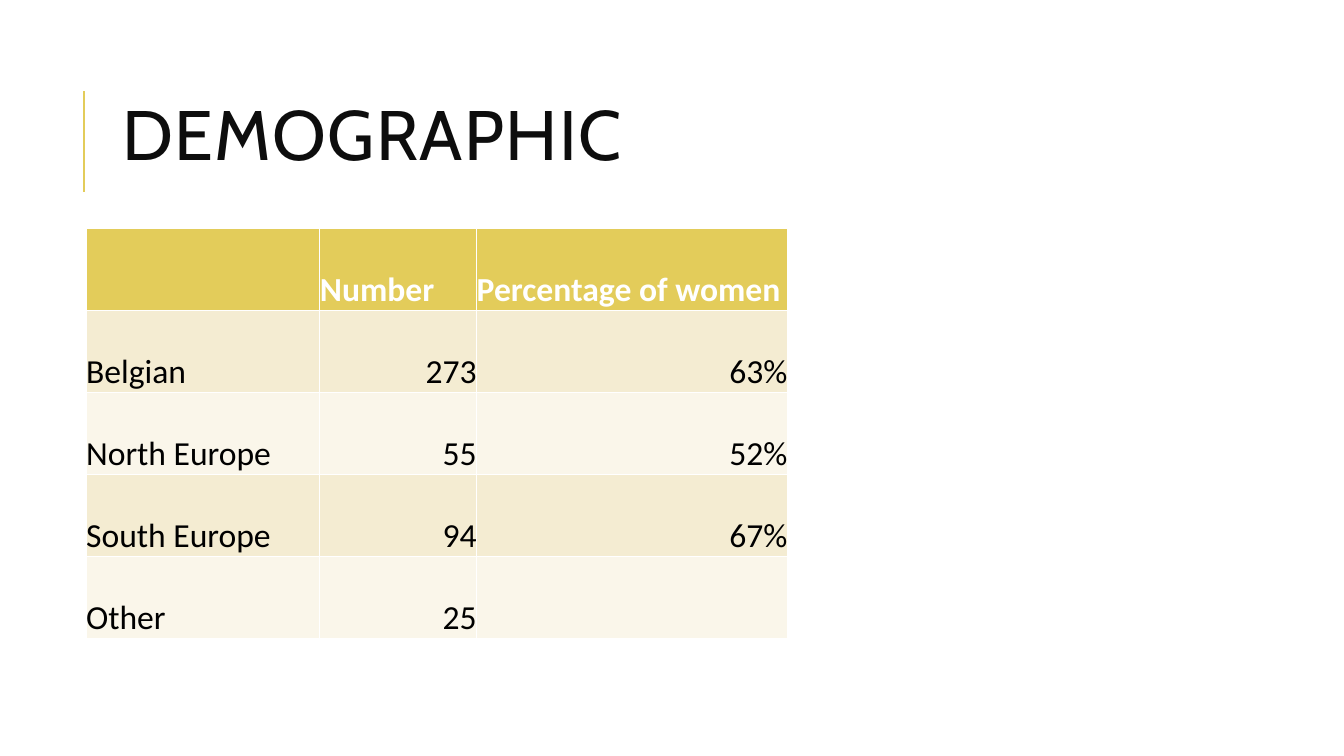
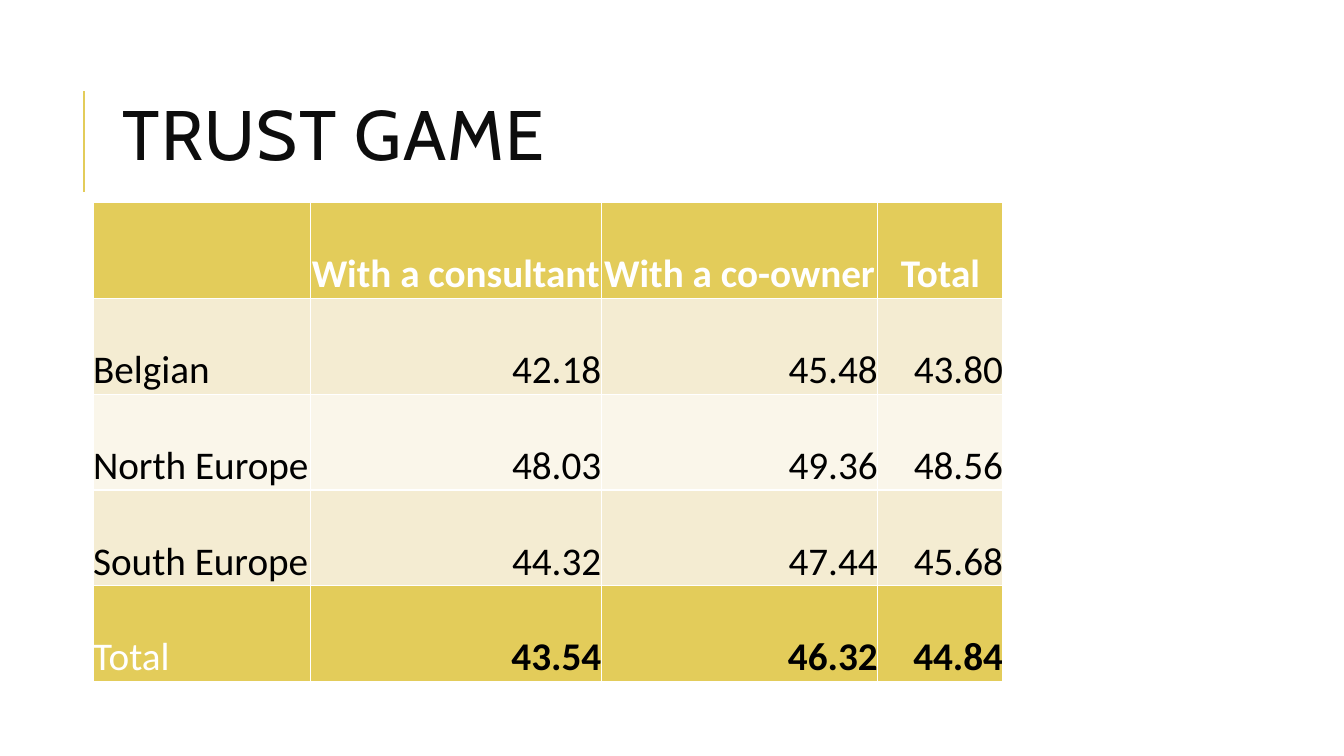
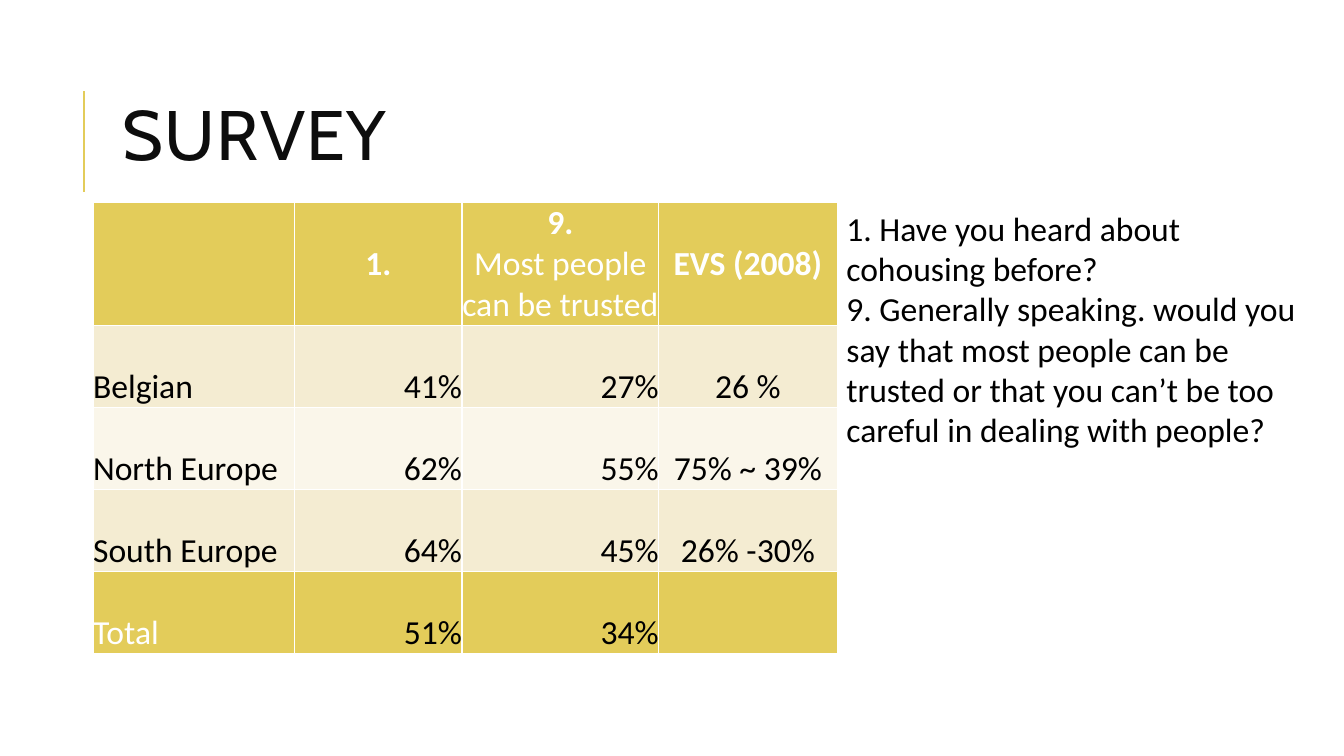
from lxml import etree
from pptx import Presentation
from pptx.dml.color import RGBColor
from pptx.enum import shapes, text
from pptx.oxml import ns
from pptx.util import Pt

GOLD = RGBColor(0xE3, 0xCC, 0x5A)
SAND = RGBColor(0xF4, 0xEC, 0xD2)
CREAM = RGBColor(0xFA, 0xF6, 0xEA)
WHITE = RGBColor(0xFF, 0xFF, 0xFF)
BLACK = RGBColor(0, 0, 0)
INK = RGBColor(0x0D, 0x0D, 0x0D)
TITLE_FONT = "Cabin"
BODY_FONT = "Calibri"
LEFT = text.PP_ALIGN.LEFT
CENTER = text.PP_ALIGN.CENTER
RIGHT = text.PP_ALIGN.RIGHT
MIDDLE = text.MSO_ANCHOR.MIDDLE
BOTTOM = text.MSO_ANCHOR.BOTTOM


def write(tf, content, size=24, font=BODY_FONT, color=BLACK, bold=False,
          lead_bold=False, align=LEFT, spacing=None, tracking=None):
    for i, line in enumerate(content.split("\n")):
        p = tf.add_paragraph() if i else tf.paragraphs[0]
        p.alignment = align
        p.line_spacing = spacing
        r = p.add_run()
        r.text = line
        r.font.size = Pt(size)
        r.font.name = font
        r.font.bold = bold or (lead_bold and i == 0)
        r.font.color.rgb = color
        if tracking:
            r.font._element.set("spc", str(tracking * 100))


def add_text(s, box, content, anchor=text.MSO_ANCHOR.TOP, **fmt):
    tf = s.shapes.add_textbox(*map(Pt, box)).text_frame
    tf.word_wrap = True
    tf.vertical_anchor = anchor
    write(tf, content, **fmt)


def add_rule(s, x, top, bottom):
    line = s.shapes.add_connector(
        shapes.MSO_CONNECTOR.STRAIGHT, Pt(x), Pt(bottom), Pt(x), Pt(top))
    line.line.color.rgb = GOLD
    line.line.width = Pt(1.5)
    etree.SubElement(line._element.spPr, ns.qn("a:effectLst"))


def add_titled_slide(prs, title):
    s = prs.slides.add_slide(prs.slide_layouts[6])
    add_rule(s, 60, 65, 137)
    add_text(s, (80.5, 62.5, 765.5, 75), title, anchor=MIDDLE, size=50,
             font=TITLE_FONT, color=INK, spacing=0.8, tracking=1)
    return s


def style_cell(cell, fill, anchor):
    cell.margin_left = cell.margin_right = 0
    cell.margin_top = cell.margin_bottom = 0
    cell.vertical_anchor = anchor
    tcPr = cell._tc.get_or_add_tcPr()
    for side in ("lnL", "lnR", "lnT", "lnB"):
        ln = etree.SubElement(tcPr, ns.qn("a:" + side), w=str(Pt(1)))
        solid = etree.SubElement(ln, ns.qn("a:solidFill"))
        etree.SubElement(solid, ns.qn("a:srgbClr"), val=str(WHITE))
    cell.fill.solid()
    cell.fill.fore_color.rgb = fill


def add_data_table(s, left, top, widths, rows, aligns, row_height,
                   header_height=None, header_align=CENTER,
                   header_anchor=BOTTOM, size=24, total=False,
                   total_bold=False):
    heights = [header_height or row_height] + [row_height] * (len(rows) - 1)
    frame = s.shapes.add_table(len(rows), len(widths), Pt(left), Pt(top),
                               Pt(sum(widths)), Pt(sum(heights)))
    table = frame.table
    for col, width in zip(table.columns, widths):
        col.width = Pt(width)
    for i, (row, height) in enumerate(zip(rows, heights)):
        table.rows[i].height = Pt(height)
        header = i == 0
        last = total and i == len(rows) - 1
        fill = GOLD if header or last else (SAND if i % 2 else CREAM)
        for j, content in enumerate(row):
            cell = table.cell(i, j)
            style_cell(cell, fill, header_anchor if header else BOTTOM)
            if content:
                write(cell.text_frame, content, size=size,
                      color=WHITE if header or (last and j == 0) else BLACK,
                      bold=last and total_bold and j > 0, lead_bold=header,
                      align=header_align if header else aligns[j])


def main():
    prs = Presentation()
    prs.slide_width, prs.slide_height = Pt(960), Pt(540)

    s = add_titled_slide(prs, "DEMOGRAPHIC")
    add_data_table(s, 61.5, 163, (167, 112, 222), [
        ("", "Number", "Percentage of women"),
        ("Belgian", "273", "63%"),
        ("North Europe", "55", "52%"),
        ("South Europe", "94", "67%"),
        ("Other", "25", ""),
    ], (LEFT, RIGHT, RIGHT), 58.6, header_align=LEFT)

    s = add_titled_slide(prs, "TRUST GAME")
    add_data_table(s, 66.5, 144.75, (155, 208, 197.5, 89.5), [
        ("", "With a consultant", "With a co-owner", "Total"),
        ("Belgian", "42.18", "45.48", "43.80"),
        ("North Europe", "48.03", "49.36", "48.56"),
        ("South Europe", "44.32", "47.44", "45.68"),
        ("Total", "43.54", "46.32", "44.84"),
    ], (LEFT, RIGHT, RIGHT, RIGHT), 68.4, size=28, total=True,
        total_bold=True)

    s = add_titled_slide(prs, "SURVEY")
    add_data_table(s, 66.5, 144.75, (144, 119.5, 140.5, 127.5), [
        ("", "1.", "9.\nMost people can be trusted", "EVS (2008)"),
        ("Belgian", "41%", "27%", "26 %"),
        ("North Europe", "62%", "55%", "75% ~ 39%"),
        ("South Europe", "64%", "45%", "26% -30%"),
        ("Total", "51%", "34%", ""),
    ], (LEFT, RIGHT, RIGHT, CENTER), 58.6, header_height=87.8,
        header_anchor=MIDDLE, total=True)
    add_text(s, (597.5, 144.75, 336.5, 181.5),
             "1. Have you heard about cohousing before?\n"
             "9. Generally speaking. would you say that most people can be "
             "trusted or that you can’t be too careful in dealing with people?")

    prs.save("out.pptx")


if __name__ == "__main__":
    main()
